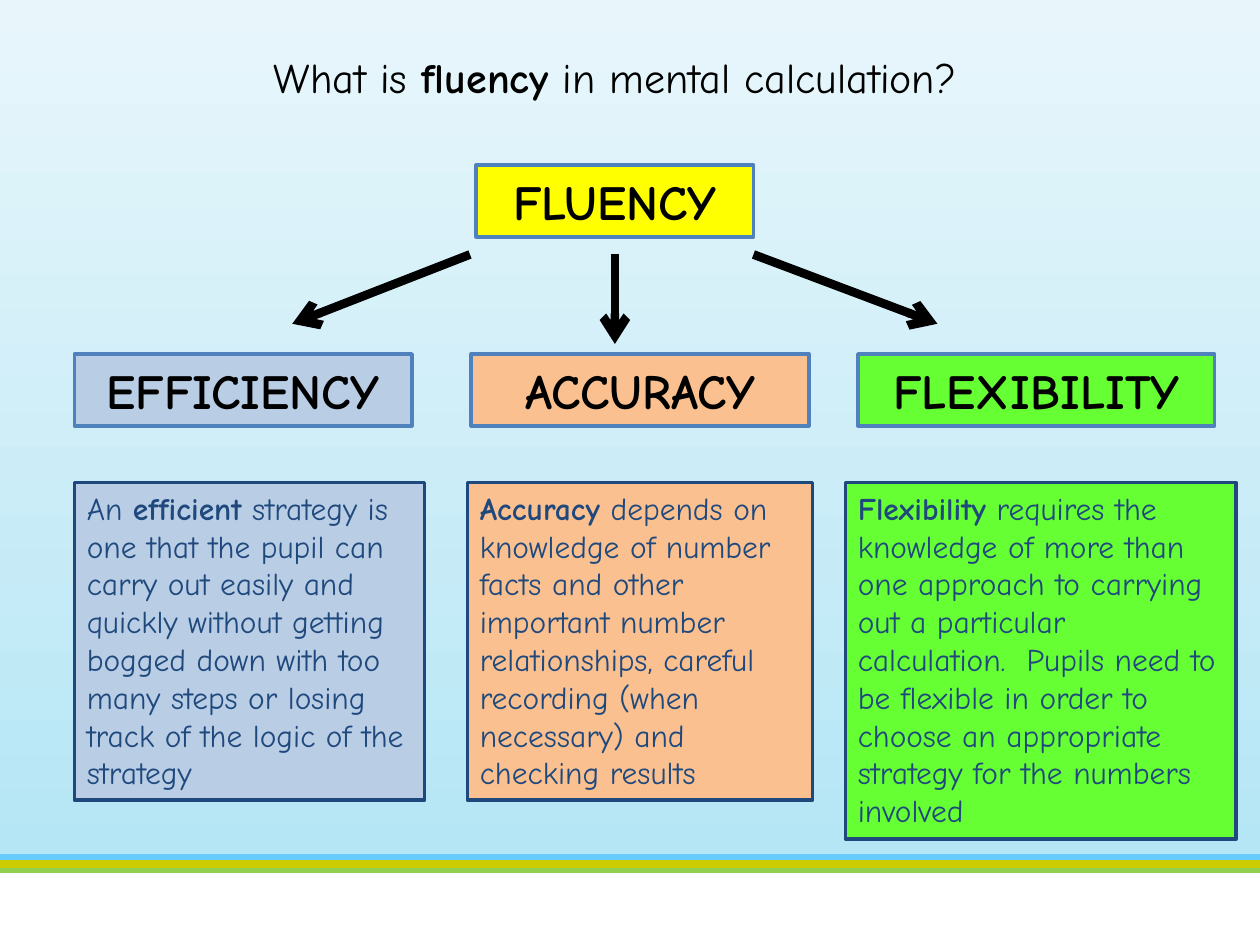
from dataclasses import dataclass

from lxml.etree import SubElement
from pptx import Presentation
from pptx.dml.color import RGBColor
from pptx.enum.shapes import MSO_CONNECTOR as Connector, MSO_SHAPE as Preset
from pptx.enum.text import MSO_ANCHOR as Anchor, PP_ALIGN as Align
from pptx.oxml.ns import qn
from pptx.util import Inches, Pt

# Grid of 100 columns by 75 rows
WIDTH, HEIGHT = Inches(10), Inches(7.5)
COLUMNS, ROWS = 100, 75
FONT = "Comic Neue"
BLACK, NAVY, BLUE = "000000", "1F497D", "4F81BD"
HEADING_ROW, HEADING_HEIGHT = 28.1, 5.7
DETAIL_ROW = 38.3
ARROW_ROW = 20.2


@dataclass
class Box:
    column: float
    row: float
    width: float
    height: float


@dataclass
class Aspect:
    """One part of fluency: a heading, its explanation and an arrow to it."""
    heading: str
    detail: str  # bold words stand between asterisks
    fill: str
    heading_column: float
    heading_width: float
    detail_column: float
    detail_width: float
    detail_height: float
    arrow_start: float
    arrow_end: tuple[float, float]


ASPECTS = [
    Aspect("EFFICIENCY",
           "An *efficient* strategy is one that the pupil can carry out easily and "
           "quickly without getting bogged down with too many steps or losing track "
           "of the logic of the strategy",
           "B9CDE5", 5.9, 26.8, 5.9, 27.8, 25.2, 37.3, (23.2, 25.7)),
    Aspect("ACCURACY",
           "*Accuracy* depends on knowledge of number facts and other important number "
           "relationships, careful recording (when necessary) and checking results",
           "FAC090", 37.4, 26.8, 37.1, 27.4, 25.2, 48.8, (48.8, 27.3)),
    Aspect("FLEXIBILITY",
           "*Flexibility* requires the knowledge of more than one approach to carrying "
           "out a particular calculation.  Pupils need to be flexible in order to "
           "choose an appropriate strategy for the numbers involved",
           "66FF33", 68.1, 28.3, 67.1, 31, 28.3, 59.8, (74.4, 25.7)),
]


def across(columns: float) -> int:
    return round(WIDTH * columns / COLUMNS)


def down(rows: float) -> int:
    return round(HEIGHT * rows / ROWS)


def place(box: Box) -> tuple[int, int, int, int]:
    return across(box.column), down(box.row), across(box.width), down(box.height)


def color(value: str) -> RGBColor:
    return RGBColor.from_string(value)


def write(shape, text: str, size: float, text_color: str, align) -> None:
    """Fill a shape with one paragraph; words between asterisks are bold."""
    frame = shape.text_frame
    frame.word_wrap = True
    frame.vertical_anchor = Anchor.TOP
    paragraph = frame.paragraphs[0]
    paragraph.alignment = align
    font = paragraph.font
    font.name, font.size = FONT, Pt(size)
    font.color.rgb = color(text_color)
    for index, part in enumerate(text.split("*")):
        if part:
            run = paragraph.add_run()
            run.text = part
            run.font.bold = index % 2 == 1


def add_box(slide, box: Box, fill: str, outline: str):
    shape = slide.shapes.add_shape(Preset.RECTANGLE, *place(box))
    shape.shadow.inherit = False
    shape.fill.solid()
    shape.fill.fore_color.rgb = color(fill)
    shape.line.color.rgb = color(outline)
    shape.line.width = Pt(2)
    return shape


def add_heading(slide, box: Box, text: str, fill: str) -> None:
    write(add_box(slide, box, fill, BLUE), f"*{text}*", 28, BLACK, Align.CENTER)


def add_line(slide, start: tuple[float, float], end: tuple[float, float],
             line_color: str, width: float, arrow: bool = False) -> None:
    line = slide.shapes.add_connector(
        Connector.STRAIGHT, across(start[0]), down(start[1]), across(end[0]), down(end[1]))
    line.line.color.rgb = color(line_color)
    line.line.width = Pt(width)
    properties = line._element.spPr
    if arrow:
        SubElement(properties.find(qn("a:ln")), qn("a:tailEnd"), type="arrow")
    SubElement(properties, qn("a:effectLst"))


def add_background(slide) -> None:
    sky = slide.shapes.add_shape(Preset.RECTANGLE, *place(Box(0, 0, COLUMNS, 68.1)))
    sky.shadow.inherit = False
    sky.line.fill.background()
    sky.fill.gradient()
    sky.fill.gradient_angle = 90
    for stop, stop_color in zip(sky.fill.gradient_stops, ("B5E6F5", "E8F6FB")):
        stop.color.rgb = color(stop_color)
    for row, stripe_color in ((69, "92D050"), (68.1, "66CCFF"), (68.6, "CCCC00")):
        add_line(slide, (0, row), (COLUMNS, row), stripe_color, 4.5)


def main() -> None:
    presentation = Presentation()
    presentation.slide_width, presentation.slide_height = WIDTH, HEIGHT
    slide = presentation.slides.add_slide(presentation.slide_layouts[6])
    add_background(slide)

    # Title and top of the diagram
    title = slide.shapes.add_textbox(*place(Box(3.5, 3.6, 90.6, 5)))
    write(title, "What is *fluency* in mental calculation?", 24, BLACK, Align.CENTER)
    add_heading(slide, Box(37.8, 13.1, 22, HEADING_HEIGHT), "FLUENCY", "FFFF00")

    # The three aspects
    for aspect in ASPECTS:
        add_heading(slide, Box(aspect.heading_column, HEADING_ROW,
                               aspect.heading_width, HEADING_HEIGHT),
                    aspect.heading, aspect.fill)
        add_line(slide, (aspect.arrow_start, ARROW_ROW), aspect.arrow_end,
                 BLACK, 5, arrow=True)
        detail = add_box(slide, Box(aspect.detail_column, DETAIL_ROW,
                                    aspect.detail_width, aspect.detail_height),
                         aspect.fill, NAVY)
        write(detail, aspect.detail, 18, NAVY, Align.LEFT)

    presentation.save("out.pptx")


if __name__ == "__main__":
    main()
